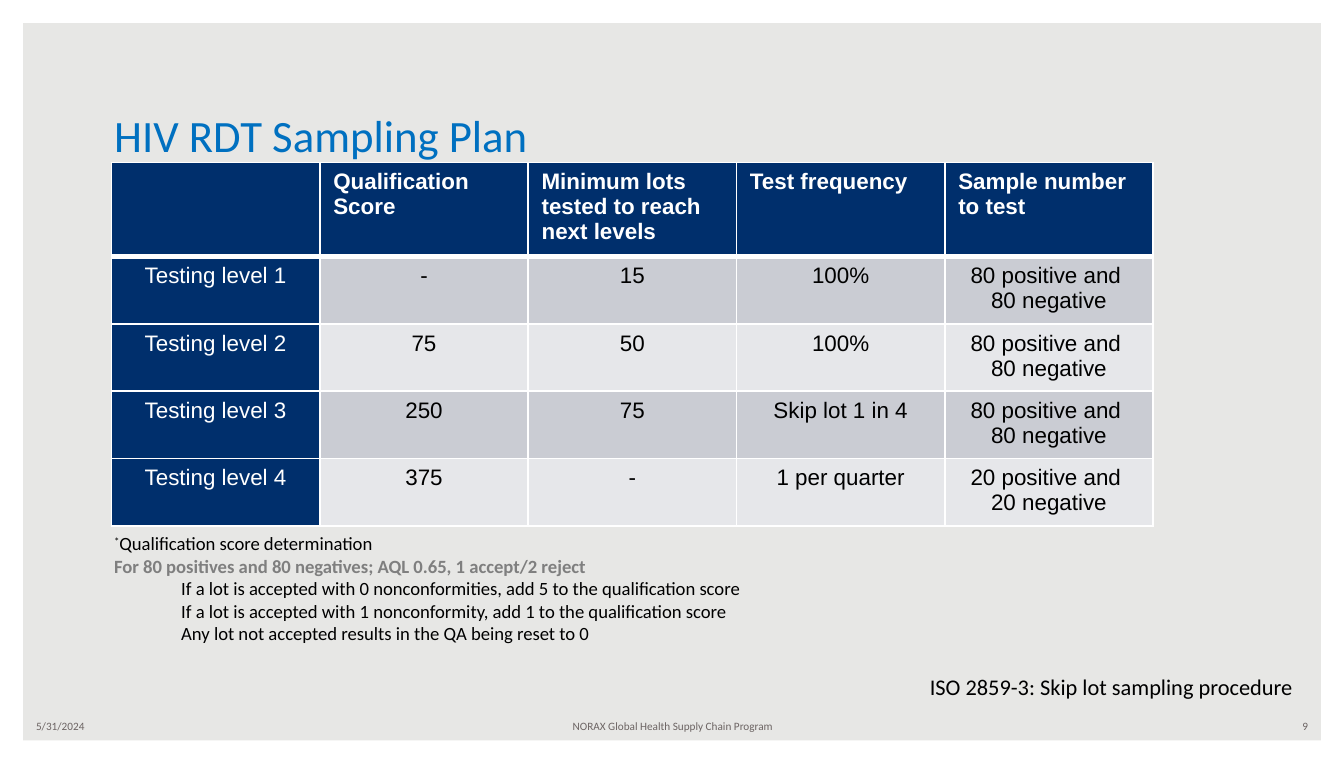
from lxml.etree import SubElement
from pptx import Presentation
from pptx.dml.color import RGBColor
from pptx.enum.shapes import MSO_SHAPE
from pptx.enum.text import MSO_ANCHOR, MSO_AUTO_SIZE, PP_ALIGN
from pptx.oxml.ns import qn
from pptx.util import Emu, Pt

COLORS = {
    "background": "E7E7E5", "white": "FFFFFF", "black": "000000",
    "title": "0070C0", "navy": "002F6C", "footer": "6C6463",
    "criteria": "7F7F7F", "dark_band": "CACCD3", "light_band": "E6E7EA",
}

TITLE = "HIV RDT Sampling Plan"
PLAN = [
    ["", "Qualification Score", "Minimum lots tested to reach next levels",
     "Test frequency", "Sample number to test"],
    ["Testing level 1", "-", "15", "100%", "80 positive and \n80 negative"],
    ["Testing level 2", "75", "50", "100%", "80 positive and \n80 negative"],
    ["Testing level 3", "250", "75", "Skip lot 1 in 4", "80 positive and \n80 negative"],
    ["Testing level 4", "375", "-", "1 per quarter", "20 positive and \n20 negative"],
]
NOTE_MARK = "*"
NOTE_HEADING = "Qualification score determination"
CRITERIA = "For 80 positives and 80 negatives; AQL 0.65, 1 accept/2 reject"
SCORING_RULES = [
    "If a lot is accepted with 0 nonconformities, add 5 to the qualification score",
    "If a lot is accepted with 1 nonconformity, add 1 to the qualification score",
    "Any lot not accepted results in the QA being reset to 0",
]
STANDARD = "ISO 2859-3: Skip lot sampling procedure"
# text, box, alignment, vertical anchor
FOOTERS = [
    ("5/31/2024", (17, 530, 233, 20), PP_ALIGN.LEFT, MSO_ANCHOR.MIDDLE),
    ("9", (750, 530, 233, 20), PP_ALIGN.RIGHT, MSO_ANCHOR.MIDDLE),
    ("NORAX Global Health Supply Chain Program", (342, 530, 317, 20),
     PP_ALIGN.CENTER, MSO_ANCHOR.TOP),
]

SLIDE_W, SLIDE_H = 1000, 567
TABLE_LEFT, TABLE_TOP, COLUMN_W = 83, 121, 155
HEADER_H, ROW_H = 70, 50


def px(length):
    """Convert px, 100 to the inch, to EMU."""
    return Emu(length * 9144)


def rgb(name):
    return RGBColor.from_string(COLORS[name])


def style(paragraph, size, color, face="Calibri", bold=False, align=PP_ALIGN.LEFT):
    font = paragraph.font
    font.size, font.name, font.bold = Pt(size), face, bold
    font.color.rgb = rgb(color)
    paragraph.alignment = align


def add_text(slide, box, anchor=MSO_ANCHOR.TOP):
    frame = slide.shapes.add_textbox(*map(px, box)).text_frame
    frame.word_wrap = True
    frame.vertical_anchor = anchor
    return frame


def set_borders(cell, widths):
    """Draw white borders; widths are points for left, right, top, bottom."""
    properties = cell._tc.get_or_add_tcPr()
    for index, (side, width) in enumerate(zip(("lnL", "lnR", "lnT", "lnB"), widths)):
        line = SubElement(properties, qn(f"a:{side}"), w=str(Pt(width)))
        fill = SubElement(line, qn("a:solidFill"))
        SubElement(fill, qn("a:srgbClr"), val=COLORS["white"])
        properties.remove(line)
        properties.insert(index, line)


def add_plan(slide):
    rows, columns = len(PLAN), len(PLAN[0])
    table = slide.shapes.add_table(
        rows, columns, px(TABLE_LEFT), px(TABLE_TOP),
        px(columns * COLUMN_W), px(HEADER_H + (rows - 1) * ROW_H)).table
    for column in table.columns:
        column.width = px(COLUMN_W)
    for r, values in enumerate(PLAN):
        header = r == 0
        table.rows[r].height = px(HEADER_H if header else ROW_H)
        for c, value in enumerate(values):
            cell = table.cell(r, c)
            cell.text = value
            label = header or c == 0
            band = "dark_band" if r % 2 else "light_band"
            cell.fill.solid()
            cell.fill.fore_color.rgb = rgb("navy" if label else band)
            set_borders(cell, (1, 1, 3 if r == 1 else 1, 3 if header else 1))
            for paragraph in cell.text_frame.paragraphs:
                style(paragraph, 12, "white" if label else "black", "Arial", header,
                      PP_ALIGN.LEFT if header else PP_ALIGN.CENTER)


def add_notes_on_scoring(slide):
    frame = add_text(slide, (75, 391, 495, 128))
    heading = frame.paragraphs[0]
    mark = heading.add_run()
    mark.text = NOTE_MARK
    mark.font._element.set("baseline", "30000")
    heading.add_run().text = NOTE_HEADING
    style(heading, 10, "black")
    criteria = frame.add_paragraph()
    criteria.text = CRITERIA
    style(criteria, 10, "criteria", bold=True)
    for rule in SCORING_RULES:
        paragraph = frame.add_paragraph()
        paragraph.text = rule
        paragraph.level = 1
        style(paragraph, 10, "black")


def main():
    deck = Presentation()
    deck.slide_width, deck.slide_height = px(SLIDE_W), px(SLIDE_H)
    slide = deck.slides.add_slide(deck.slide_layouts[5])
    slide.background.fill.solid()
    slide.background.fill.fore_color.rgb = rgb("background")

    border = slide.shapes.add_shape(MSO_SHAPE.FRAME, 0, 0, px(SLIDE_W), px(SLIDE_H + 1))
    border.adjustments[0] = 0.03
    border.shadow.inherit = False
    border.fill.solid()
    border.fill.fore_color.rgb = rgb("white")
    border.line.fill.background()

    title = slide.shapes.title
    title.left, title.top, title.width, title.height = map(px, (75, 74, 850, 51))
    title.text_frame.text = TITLE
    title.text_frame.auto_size = MSO_AUTO_SIZE.NONE
    title.text_frame.vertical_anchor = MSO_ANCHOR.BOTTOM
    style(title.text_frame.paragraphs[0], 24, "title")

    add_notes_on_scoring(slide)
    add_plan(slide)

    standard = add_text(slide, (682, 496, 294, 30)).paragraphs[0]
    standard.text = STANDARD
    style(standard, 12, "black")

    for text, box, align, anchor in FOOTERS:
        footer = add_text(slide, box, anchor).paragraphs[0]
        footer.text = text
        style(footer, 6, "footer", align=align)

    deck.save("out.pptx")


if __name__ == "__main__":
    main()
